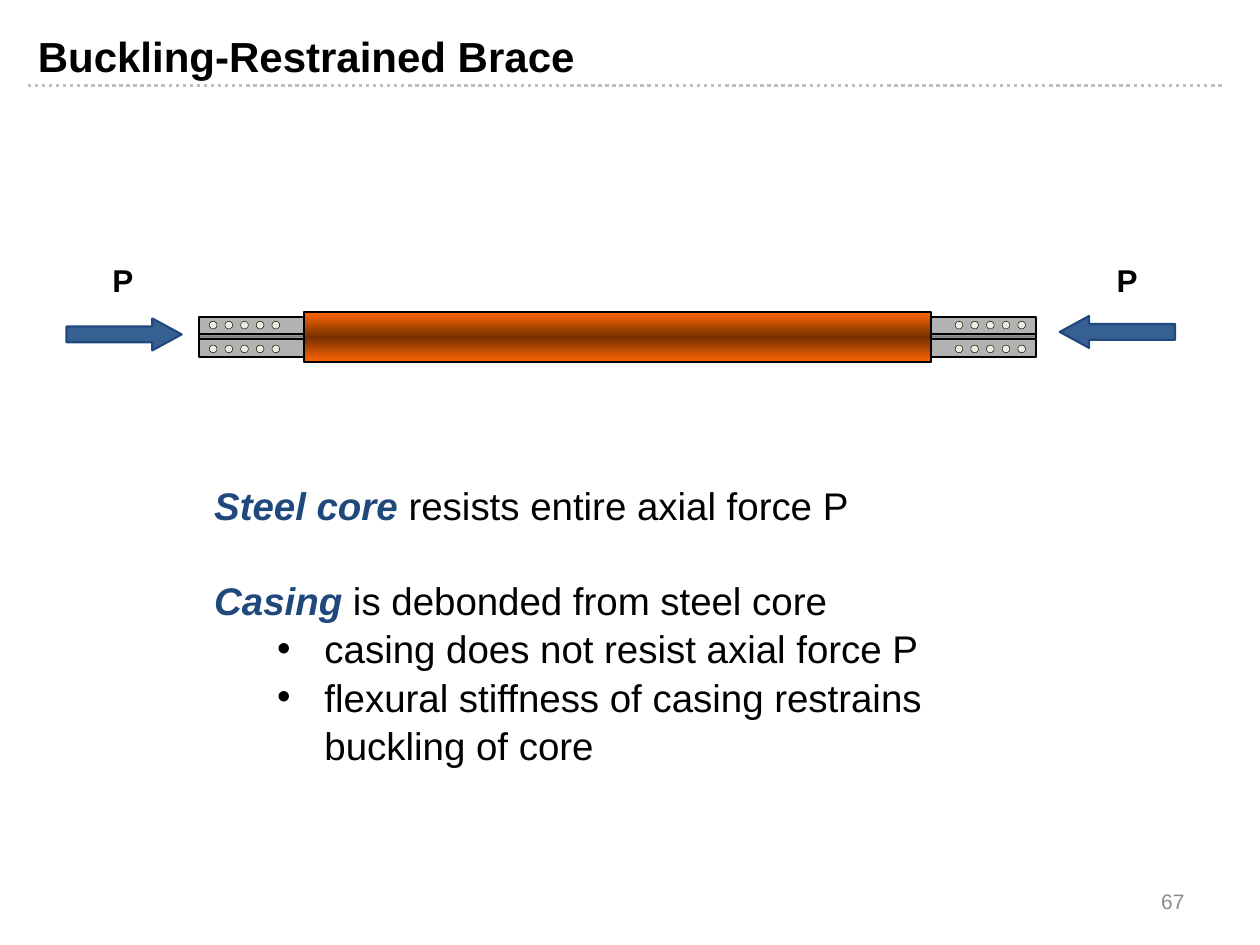
import copy
import dataclasses

import lxml.etree
import pptx
import pptx.dml.color
import pptx.enum.dml
import pptx.enum.shapes
import pptx.enum.text
import pptx.oxml.ns
import pptx.util

Pt = pptx.util.Pt
SHAPE = pptx.enum.shapes.MSO_SHAPE
ALIGN = pptx.enum.text.PP_ALIGN
ANCHOR = pptx.enum.text.MSO_ANCHOR
qn = pptx.oxml.ns.qn


@dataclasses.dataclass(frozen=True)
class Theme:
    """Colours, font and type sizes of the slide."""
    font: str = "Arial"
    ink: str = "000000"
    accent: str = "1F497D"
    arrow: str = "366092"
    steel: str = "B2B2B2"
    steel_shade: str = "7F7F7F"
    bolt: str = "EEECE1"
    casing: str = "FF6600"
    casing_shade: str = "762F00"
    divider: str = "BFBFBF"
    muted: str = "8C8C8C"
    title_size: float = 24
    body_size: float = 22
    label_size: float = 18
    number_size: float = 12


THEME = Theme()
MIRROR_AXIS = 352.8


def rgb(code):
    """Turn a hex code into a colour."""
    return pptx.dml.color.RGBColor.from_string(code)


def write(paragraph, text, *, size, color=THEME.ink, bold=False, italic=False, align=ALIGN.LEFT):
    """Add formatted text to a paragraph."""
    paragraph.alignment = align
    run = paragraph.add_run()
    run.text = text
    font = run.font
    font.name, font.size = THEME.font, Pt(size)
    font.bold, font.italic = bold, italic
    font.color.rgb = rgb(color)


def style(shape, colors, line_width, line_color=THEME.ink):
    """Give a shape a solid or vertical gradient fill and an outline."""
    shape.shadow.inherit = False
    shape.line.color.rgb = rgb(line_color)
    shape.line.width = Pt(line_width)
    if len(colors) == 1:
        shape.fill.solid()
        shape.fill.fore_color.rgb = rgb(colors[0])
        return
    shape.fill.gradient()
    shape.fill.gradient_angle = 90
    stop_list = shape._element.spPr.find(".//" + qn("a:gsLst"))
    stop_list.insert(1, copy.deepcopy(stop_list[0]))
    for index, (stop, color) in enumerate(zip(shape.fill.gradient_stops, colors)):
        stop.position = index / (len(colors) - 1)
        stop.color.rgb = rgb(color)


def add_part(slide, kind, box, colors, line_width, line_color=THEME.ink):
    """Add a preset shape at a box given in points."""
    part = slide.shapes.add_shape(kind, *map(Pt, box))
    style(part, colors, line_width, line_color)
    return part


def add_label(slide, text, box, anchor=ANCHOR.TOP, **text_format):
    """Add a one-line text box."""
    frame = slide.shapes.add_textbox(*map(Pt, box)).text_frame
    frame.word_wrap = True
    frame.vertical_anchor = anchor
    write(frame.paragraphs[0], text, **text_format)


def add_divider(slide):
    """Draw the dotted rule below the title."""
    divider = slide.shapes.add_connector(
        pptx.enum.shapes.MSO_CONNECTOR.STRAIGHT, Pt(15.8), Pt(49), Pt(699.8), Pt(49))
    divider.line.color.rgb = rgb(THEME.divider)
    divider.line.width = Pt(2)
    divider.line.dash_style = pptx.enum.dml.MSO_LINE.ROUND_DOT
    lxml.etree.SubElement(divider._element.spPr, qn("a:effectLst"))


def add_core_end(slide, mirrored):
    """Draw one half of the steel core with its bolted end."""
    def place(left, width=0):
        return 2 * MIRROR_AXIS - left - width if mirrored else left

    def part(kind, left, top, width, height, colors, line_width):
        add_part(slide, kind, (place(left, width), top, width, height), colors, line_width)

    steel = [THEME.steel]
    part(SHAPE.RECTANGLE, 197.3, 186.5, 155.5, 12.2, steel, 1.25)
    outline = [(Pt(place(x)), Pt(y)) for x, y in
               [(186.5, 203.9), (198, 198), (198, 187.2), (186.5, 181.4)]]
    taper = slide.shapes.build_freeform(*outline[0])
    taper.add_line_segments(outline[1:], close=True)
    style(taper.convert_to_shape(), steel, 1.25)
    part(SHAPE.RECTANGLE, 113.8, 181.4, 72.7, 22.8, steel, 1.25)
    part(SHAPE.RECTANGLE, 113.8, 190.9, 77.8, 2.9,
         [THEME.steel, THEME.steel_shade, THEME.steel], 0.75)
    for top in (183.6, 197.2):
        for column in range(5):
            part(SHAPE.OVAL, 119.6 + 8.95 * column, top, 4.4, 4.4, [THEME.bolt], 0.25)


def add_force(slide, kind, arrow_left, arrow_top, label_left):
    """Draw an axial force arrow with its label."""
    arrow = add_part(slide, kind, (arrow_left, arrow_top, 65.8, 18.2),
                     [THEME.arrow], 1.25, THEME.accent)
    arrow.adjustments[0], arrow.adjustments[1] = 0.5, 0.92
    add_label(slide, "P", (label_left, 145.8, 67, 28.8),
              size=THEME.label_size, bold=True, align=ALIGN.CENTER)


def fill_placeholder(placeholder, box):
    """Move a placeholder and return its top-anchored text frame."""
    placeholder.left, placeholder.top, placeholder.width, placeholder.height = map(Pt, box)
    frame = placeholder.text_frame
    frame.word_wrap = True
    frame.auto_size = pptx.enum.text.MSO_AUTO_SIZE.NONE
    frame.vertical_anchor = ANCHOR.TOP
    return frame


def add_statement(frame, term, text, level=0, space_before=0):
    """Add a body paragraph, with a bullet on the second level."""
    first = frame.paragraphs[0]
    paragraph = frame.add_paragraph() if first.runs else first
    paragraph.level = level
    properties = paragraph._p.get_or_add_pPr()
    properties.set("marL", str(Pt(63 * level)))
    properties.set("indent", str(Pt(-27 * level)))
    if level:
        lxml.etree.SubElement(properties, qn("a:buFont"), typeface=THEME.font)
        lxml.etree.SubElement(properties, qn("a:buChar"), char="•")
    else:
        lxml.etree.SubElement(properties, qn("a:buNone"))
    paragraph.line_spacing = 1.05
    paragraph.space_before = Pt(space_before)
    if term:
        write(paragraph, term, size=THEME.body_size, color=THEME.accent, bold=True, italic=True)
    write(paragraph, text, size=THEME.body_size)


def main():
    """Build and save the slide."""
    deck = pptx.Presentation()
    deck.slide_width, deck.slide_height = Pt(720), Pt(540)
    slide = deck.slides.add_slide(deck.slide_layouts[1])

    title = fill_placeholder(slide.shapes.title, (14.4, 14, 646.6, 31.7))
    write(title.paragraphs[0], "Buckling-Restrained Brace", size=THEME.title_size, bold=True)
    add_divider(slide)

    for mirrored in (False, True):
        add_core_end(slide, mirrored)
    add_force(slide, SHAPE.LEFT_ARROW, 605.6, 180.6, 610.6)
    add_force(slide, SHAPE.RIGHT_ARROW, 38, 182, 36.7)
    add_part(slide, SHAPE.RECTANGLE, (173.7, 178.4, 358.4, 28.6),
             [THEME.casing, THEME.casing_shade, THEME.casing], 1)

    body = fill_placeholder(slide.placeholders[1], (115.2, 270.5, 465.8, 189.4))
    add_statement(body, "Steel core ", "resists entire axial force P")
    add_statement(body, "Casing", " is debonded from steel core", space_before=26.4)
    for consequence in ("casing does not resist axial force P",
                        "flexural stiffness of casing restrains buckling of core"):
        add_statement(body, "", consequence, level=1)

    add_label(slide, "67", (516.2, 500.6, 167.8, 28.8), ANCHOR.MIDDLE,
              size=THEME.number_size, color=THEME.muted, align=ALIGN.RIGHT)
    deck.save("out.pptx")


if __name__ == "__main__":
    main()
